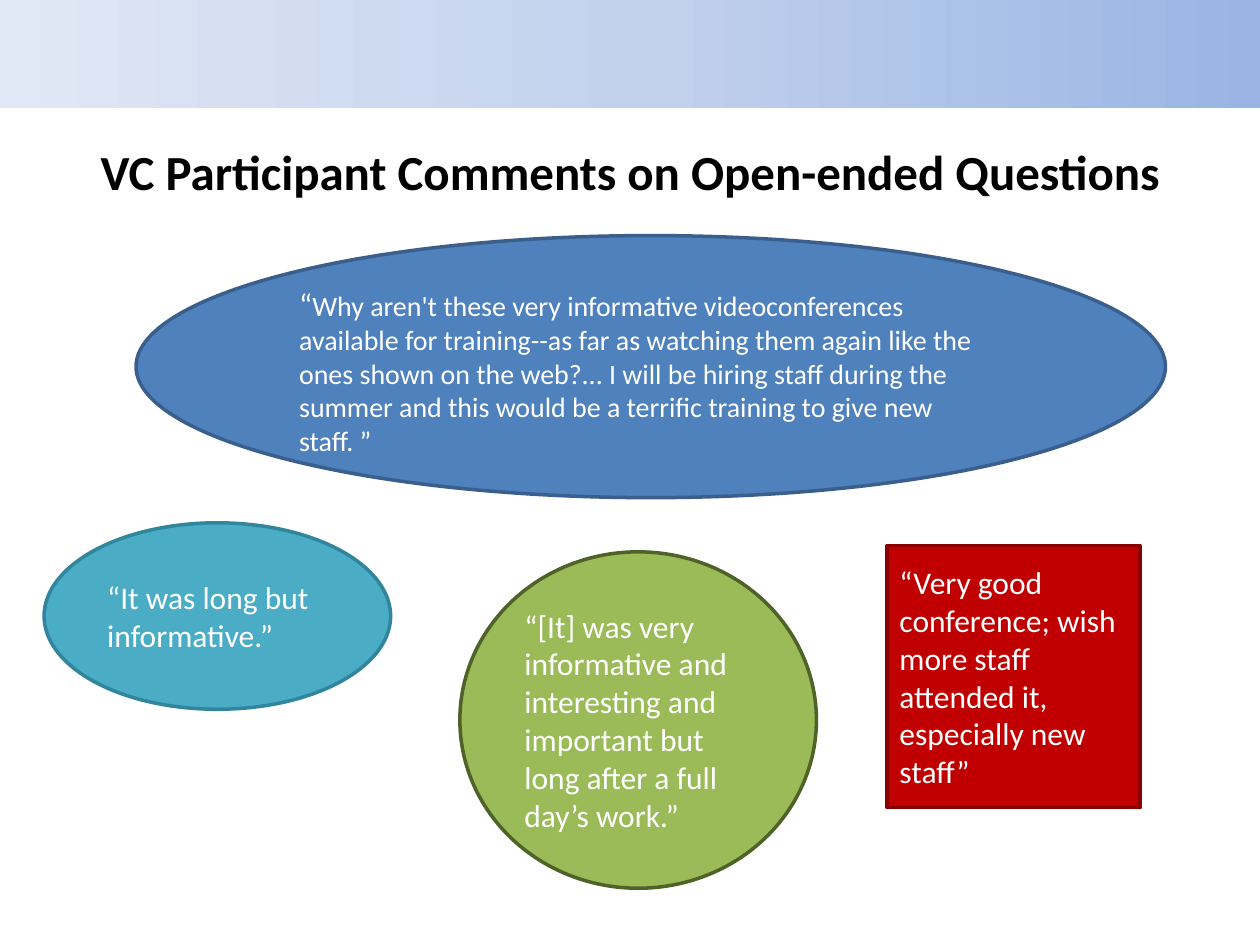
from copy import deepcopy

from pptx import Presentation
from pptx.dml.color import RGBColor
from pptx.enum.shapes import MSO_SHAPE as Shape
from pptx.enum.text import MSO_ANCHOR as Anchor, MSO_AUTO_SIZE as AutoSize, PP_ALIGN as Align
from pptx.util import Inches, Pt


def colour(hex_code):
    return RGBColor.from_string(hex_code)


class CommentSlide:
    """Places elements by inches expressed as shares of a 10 by 7.5 slide."""

    font_name = "Calibri"
    width, height = Inches(10), Inches(7.5)

    def __init__(self, prs):
        prs.slide_width, prs.slide_height = self.width, self.height
        self.slide = prs.slides.add_slide(prs.slide_layouts[5])

    def area(self, left, top, width, height):
        """Turn percentages of the slide's size into lengths."""
        return (int(self.width * left / 100), int(self.height * top / 100),
                int(self.width * width / 100), int(self.height * height / 100))

    def style(self, paragraph, size, hex_code, align, bold=False):
        font = paragraph.font
        font.name, font.size, font.bold = self.font_name, Pt(size), bold
        font.color.rgb = colour(hex_code)
        paragraph.alignment = align

    def shape(self, kind, share):
        shape = self.slide.shapes.add_shape(kind, *self.area(*share))
        shape.shadow.inherit = False
        return shape

    def band(self, share, hex_codes):
        """Draw a strip whose colours run evenly from right to left."""
        band = self.shape(Shape.RECTANGLE, share)
        band.line.fill.background()
        band.fill.gradient()
        band.fill.gradient_angle = 180
        first = band.fill._fill._gradFill.gsLst[0]
        first.addnext(deepcopy(first))
        for index, (stop, code) in enumerate(zip(band.fill.gradient_stops, hex_codes)):
            stop.position = index / (len(hex_codes) - 1)
            stop.color.rgb = colour(code)

    def title(self, share, text):
        title = self.slide.shapes.title
        title.left, title.top, title.width, title.height = self.area(*share)
        frame = title.text_frame
        frame.text = text
        frame.auto_size = AutoSize.NONE
        frame.vertical_anchor = Anchor.TOP
        self.style(frame.paragraphs[0], 28, "000000", Align.CENTER, bold=True)

    def comment(self, kind, share, fill, line, text, size=18):
        bubble = self.shape(kind, share)
        bubble.fill.solid()
        bubble.fill.fore_color.rgb = colour(fill)
        bubble.line.color.rgb = colour(line)
        bubble.line.width = Pt(2)
        frame = bubble.text_frame
        frame.word_wrap = True
        frame.vertical_anchor = Anchor.MIDDLE
        frame.text = text
        self.style(frame.paragraphs[0], size, "FFFFFF", Align.LEFT)
        return frame


def main():
    prs = Presentation()
    page = CommentSlide(prs)
    page.band((0, 0, 100, 11.47), ["9AB5E4", "C2D1ED", "E1E8F5"])
    page.title((5, 14.27, 90, 6.4), "VC Participant Comments on Open-ended Questions")

    training = page.comment(
        Shape.OVAL, (10.8, 24.93, 81.7, 27.73), "4F81BD", "3A5F8C",
        "Why aren't these very informative videoconferences available for training--as far as "
        "watching them again like the ones shown on the web?... I will be hiring staff during "
        "the summer and this would be a terrific training to give new staff. ”", size=16)
    training.margin_top, training.margin_bottom = Inches(0.07), 0
    training.margin_right = Inches(0.2)
    wording = training.paragraphs[0].runs[0]
    quote_mark = training.paragraphs[0].add_run()
    quote_mark.text = "“"
    quote_mark.font.size = Pt(18)
    wording._r.addprevious(quote_mark._r)

    page.comment(Shape.OVAL, (3.5, 55.33, 27.5, 19.73), "4BACC6", "31859C",
                 "“It was long but informative.”")
    page.comment(Shape.RECTANGLE, (70.4, 57.73, 20.1, 27.73), "C00000", "8A0000",
                 "“Very good conference; wish more staff attended it, especially new staff”")
    page.comment(Shape.OVAL, (36.5, 58.4, 28.3, 35.6), "9BBB59", "4F6228",
                 "“[It] was very informative and interesting and important but long after "
                 "a full day’s work.”")
    prs.save("out.pptx")


if __name__ == "__main__":
    main()
